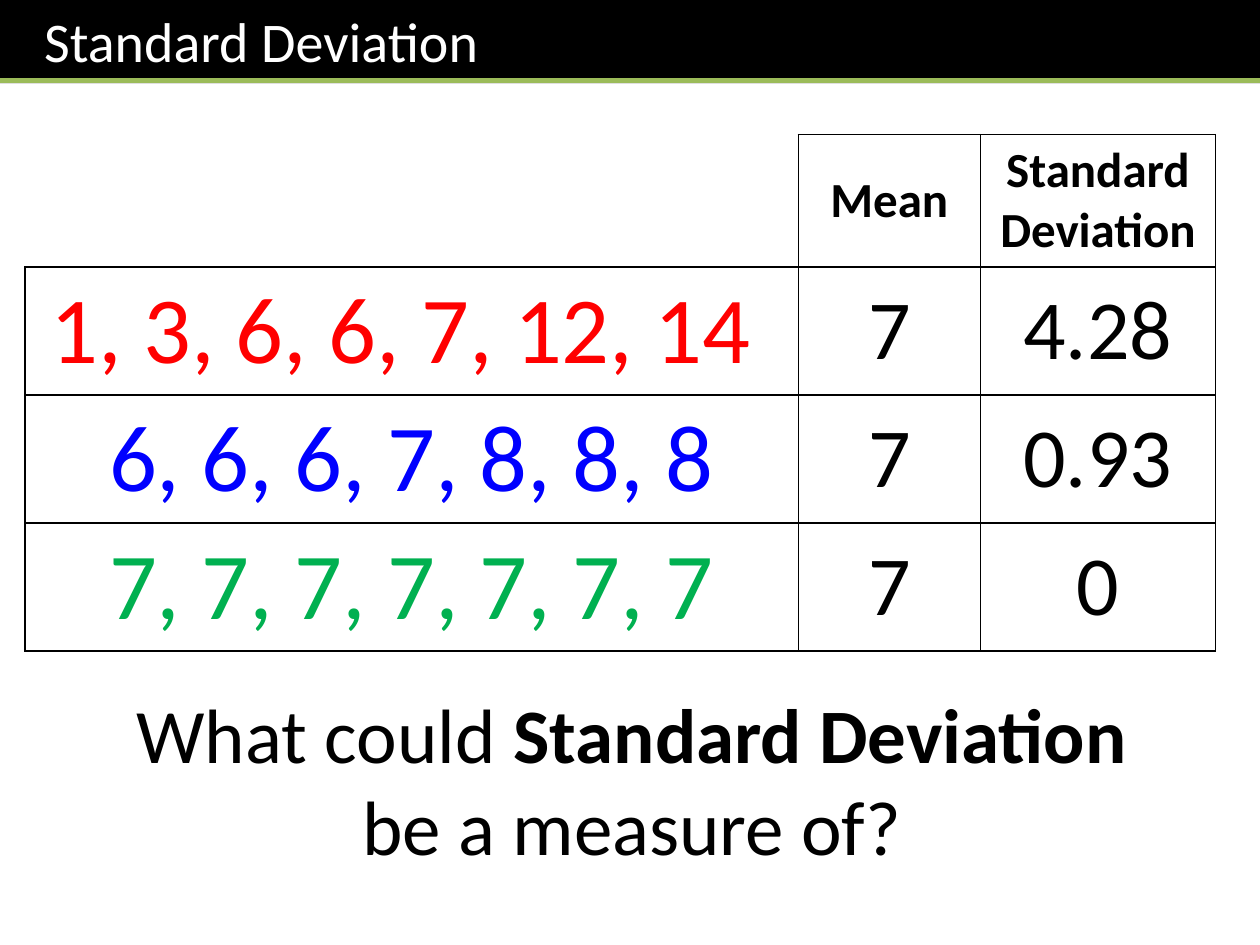
from lxml.etree import SubElement
from pptx import Presentation
from pptx.dml.color import RGBColor
from pptx.enum.shapes import MSO_CONNECTOR
from pptx.enum.text import MSO_ANCHOR as ANCHOR, PP_ALIGN as ALIGN
from pptx.oxml.ns import qn
from pptx.util import Pt

COLORS = {
    "black": "000000", "white": "FFFFFF", "accent": "9BBB59",
    "red": "FF0000", "blue": "0000FF", "green": "00B050",
}


def rgb(name):
    return RGBColor.from_string(COLORS[name])


def add_text(p, text, font="Calibri", size=44, color="black", bold=False, align=ALIGN.CENTER):
    p.alignment = align
    r = p.add_run()
    r.text = text
    r.font.name = font
    r.font.size = Pt(size)
    r.font.bold = bold
    r.font.color.rgb = rgb(color)


class SlideBuilder:
    def __init__(self, slide, line_color="black", line_width=1):
        self.slide = slide
        self.line_color = line_color
        self.line_width = line_width

    def title(self, text, x, y, w, h):
        sp = self.slide.shapes.title
        sp.left, sp.top, sp.width, sp.height = Pt(x), Pt(y), Pt(w), Pt(h)
        sp.fill.solid()
        sp.fill.fore_color.rgb = rgb("black")
        tf = sp.text_frame
        tf.margin_left = Pt(25.2)
        tf.vertical_anchor = ANCHOR.TOP
        add_text(tf.paragraphs[0], text, size=32, color="white", align=ALIGN.LEFT)

    def line(self, x1, y1, x2, y2, color, width):
        cxn = self.slide.shapes.add_connector(
            MSO_CONNECTOR.STRAIGHT, Pt(x1), Pt(y1), Pt(x2), Pt(y2))
        cxn.line.color.rgb = rgb(color)
        cxn.line.width = Pt(width)
        SubElement(cxn._element.spPr, qn("a:effectLst"))

    def borders(self, cell, visible):
        tc_pr = cell._tc.get_or_add_tcPr()
        for side in "LRTB":
            ln = SubElement(tc_pr, qn(f"a:ln{side}"), w=str(Pt(self.line_width)))
            if side in visible:
                fill = SubElement(ln, qn("a:solidFill"))
                SubElement(fill, qn("a:srgbClr"), val=COLORS[self.line_color])
            else:
                SubElement(ln, qn("a:noFill"))

    def table(self, rows, x, y, widths, heights):
        frame = self.slide.shapes.add_table(
            len(rows), len(widths), Pt(x), Pt(y), Pt(sum(widths)), Pt(sum(heights)))
        table = frame.table
        table.first_row = table.horz_banding = False
        for column, width in zip(table.columns, widths):
            column.width = Pt(width)
        for row, height in zip(table.rows, heights):
            row.height = Pt(height)
        for i, row in enumerate(rows):
            for j, (text, style) in enumerate(row):
                cell = table.cell(i, j)
                self.borders(cell, "LRTB" if text else "RB")
                cell.fill.background()
                if j:
                    cell.vertical_anchor = ANCHOR.MIDDLE
                if text:
                    add_text(cell.text_frame.paragraphs[0], text, **style)

    def text_box(self, lines, x, y, w, h):
        tf = self.slide.shapes.add_textbox(Pt(x), Pt(y), Pt(w), Pt(h)).text_frame
        tf.word_wrap = False
        for i, runs in enumerate(lines):
            p = tf.add_paragraph() if i else tf.paragraphs[0]
            for text, bold in runs:
                add_text(p, text, bold=bold)


def main():
    prs = Presentation()
    prs.slide_width, prs.slide_height = Pt(720), Pt(540)
    s = SlideBuilder(prs.slides.add_slide(prs.slide_layouts[5]))

    s.title("Standard Deviation", 0, 0, 720, 47.5)
    s.line(0, 46.1, 720, 46.1, "accent", 3)

    header = {"size": 28, "bold": True}
    value = {"size": 48}
    data_sets = [
        ("1, 3, 6, 6, 7, 12, 14 ", "red", "4.28"),
        ("6, 6, 6, 7, 8, 8, 8", "blue", "0.93"),
        ("7, 7, 7, 7, 7, 7, 7", "green", "0"),
    ]
    rows = [[("", header), ("Mean", header), ("Standard Deviation", header)]]
    for numbers, color, deviation in data_sets:
        rows.append([(numbers, {"size": 54, "color": color}),
                     ("7", value), (deviation, value)])
    s.table(rows, 14.2, 77, [442, 104, 134.5], [74.6] + [72] * 3)

    s.text_box([
        [("What could ", False), ("Standard Deviation ", True)],
        [("be a measure of? ", False)],
    ], 65.5, 388.8, 601.2, 113.8)

    prs.save("out.pptx")


if __name__ == "__main__":
    main()
